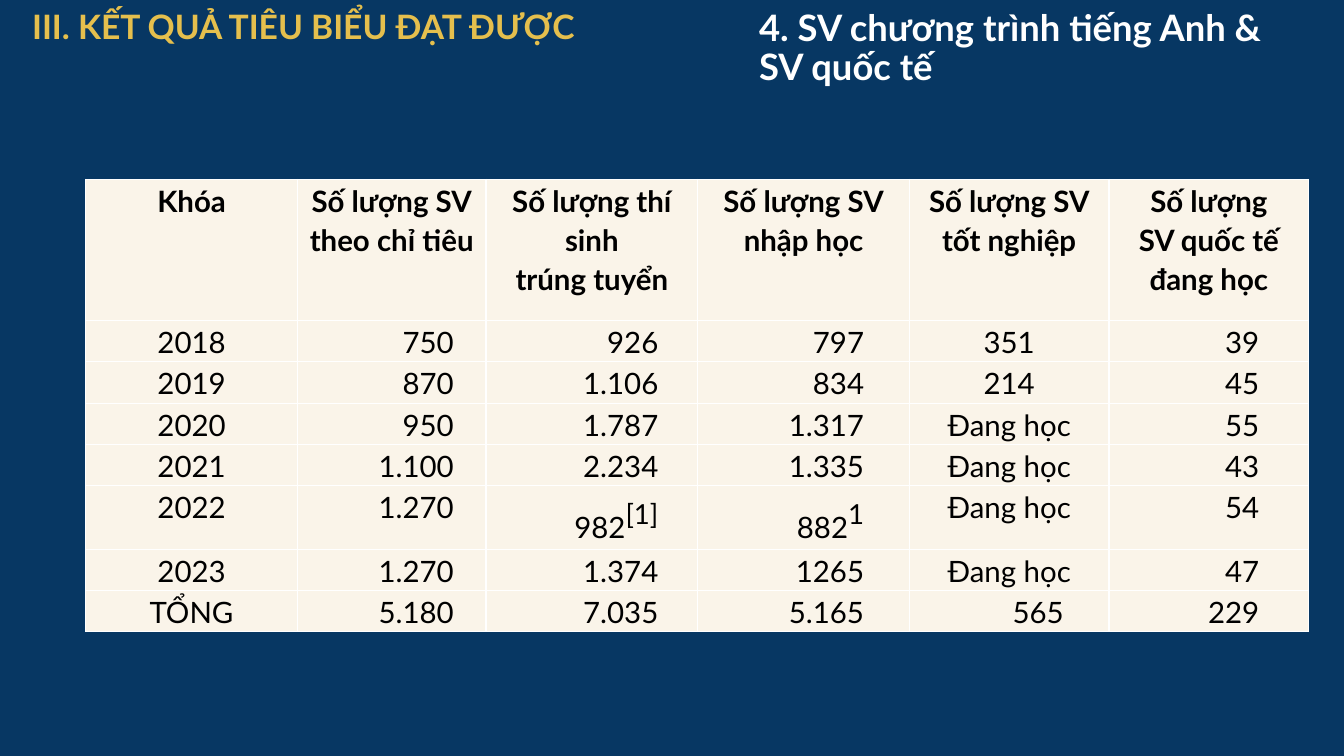
import pptx
import pptx.util
import pptx.dml.color
import pptx.enum.text
import pptx.oxml
import pptx.oxml.ns

WIDE, HIGH = 13.33, 7.5
HUES = {"navy": "073763", "gold": "E5BF4D", "white": "FFFFFF", "black": "000000", "cream": "FAF4E9"}
HEADS = [
    ("III. KẾT QUẢ TIÊU BIỂU ĐẠT ĐƯỢC", (0.22, 0, 8.76, 0.69), 24, "gold"),
    ("4. SV chương trình tiếng Anh & SV quốc tế", (7.43, 0, 5.69, 1.29), 26, "white"),
]
ROWS = [
    ["Khóa", "Số lượng SV\ntheo chỉ tiêu", "Số lượng thí sinh\ntrúng tuyển",
     "Số lượng SV\nnhập học", "Số lượng SV\ntốt nghiệp", "Số lượng\nSV quốc tế\nđang học"],
    ["2018", "750", "926", "797", "351", "39"],
    ["2019", "870", "1.106", "834", "214", "45"],
    ["2020", "950", "1.787", "1.317", "Đang học", "55"],
    ["2021", "1.100", "2.234", "1.335", "Đang học", "43"],
    ["2022", "1.270", ("982", "[1]"), ("882", "1"), "Đang học", "54"],
    ["2023", "1.270", "1.374", "1265", "Đang học", "47"],
    ["TỔNG", "5.180", "7.035", "5.165", "565", "229"],
]
COLS = [2.1, 1.87, 2.1, 2.1, 1.98, 1.98]
TALL = [1.4] + [0.41] * 4 + [0.57] + [0.41] * 2
PADS = [0, 0.32, 0.39, 0.45, 0.45, 0.49]
LEFT, TOP = 0.85, 1.78
NOTE = 34

inch = pptx.util.Inches
ALIGN = pptx.enum.text.PP_ALIGN


def tint(name):
    return pptx.dml.color.RGBColor.from_string(HUES[name])


def write(frame, text, size=21, hue="black", bold=False, align=ALIGN.LEFT,
          space=1.11, before=0, after=0, inset=0, pad=0, note=""):
    frame.word_wrap = True
    frame.margin_left = frame.margin_right = inch(inset)
    frame.margin_top = frame.margin_bottom = inch(inset)
    para = frame.paragraphs[0]
    para.alignment, para.line_spacing = align, space
    para.space_before, para.space_after = pptx.util.Pt(before), pptx.util.Pt(after)
    if pad:
        para._p.get_or_add_pPr().set("marR", str(inch(pad)))
    parts = [(line, size, False) for line in text.split("\n")]
    if note:
        parts.append((note, NOTE, True))
    for i, (part, points, raised) in enumerate(parts):
        if i and not raised:
            para.add_line_break()
        run = para.add_run()
        run.text = part
        font = run.font
        font.name, font.size, font.bold = "Lato", pptx.util.Pt(points), bold
        font.color.rgb = tint(hue)
        if raised:
            run._r.get_or_add_rPr().set("baseline", "30000")


def edge(cell):
    props = cell._tc.get_or_add_tcPr()
    for i, side in enumerate(("lnL", "lnR", "lnT", "lnB")):
        props.insert(i, pptx.oxml.parse_xml(
            f'<a:{side} {pptx.oxml.ns.nsdecls("a")} w="12700"><a:solidFill>'
            f'<a:srgbClr val="{HUES["white"]}"/></a:solidFill></a:{side}>'))


def main():
    deck = pptx.Presentation()
    deck.slide_width, deck.slide_height = inch(WIDE), inch(HIGH)
    slide = deck.slides.add_slide(deck.slide_layouts[6])
    back = slide.background.fill
    back.solid()
    back.fore_color.rgb = tint("navy")

    for text, place, size, hue in HEADS:
        box = slide.shapes.add_textbox(*map(inch, place))
        write(box.text_frame, text, size=size, hue=hue, bold=True,
              space=0.9, before=16, inset=0.1)

    grid = slide.shapes.add_table(len(ROWS), len(COLS), inch(LEFT), inch(TOP),
                                  inch(sum(COLS)), inch(sum(TALL))).table
    grid.first_row = grid.horz_banding = False
    for c, width in enumerate(COLS):
        grid.columns[c].width = inch(width)
    for r, row in enumerate(ROWS):
        grid.rows[r].height = inch(TALL[r])
        for c, item in enumerate(row):
            cell = grid.cell(r, c)
            cell.fill.solid()
            cell.fill.fore_color.rgb = tint("cream")
            edge(cell)
            text, note = item if isinstance(item, tuple) else (item, "")
            last = r == len(ROWS) - 1
            mid = r == 0 or c == 0 or (c == 4 and not last)
            write(cell.text_frame, text, note=note, bold=r == 0, after=8,
                  align=ALIGN.CENTER if mid else ALIGN.RIGHT,
                  pad=0 if mid else PADS[c])
            cell.margin_left = cell.margin_right = 0
            cell.margin_top = cell.margin_bottom = 0

    deck.save("out.pptx")


if __name__ == "__main__":
    main()
